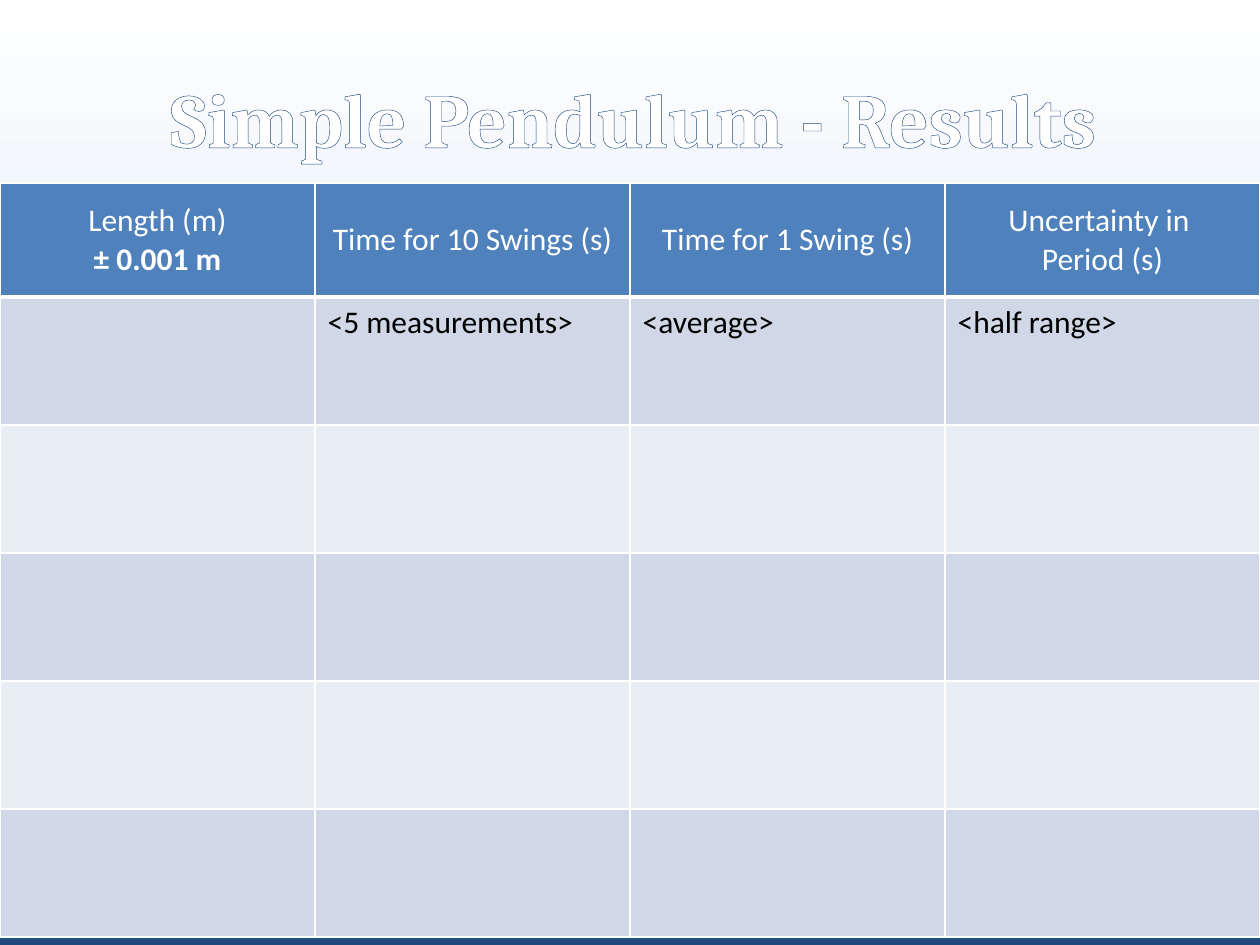
from pptx import Presentation as Deck
from pptx.dml.color import RGBColor as RGB
from pptx.enum.text import MSO_ANCHOR as Anchor, PP_ALIGN as Align
from pptx.oxml import parse_xml as parse
from pptx.util import Emu, Pt

NS = 'xmlns:a="http://schemas.openxmlformats.org/drawingml/2006/main"'
UNIT = 914400 / 126
NAVY, BLUE, WHITE, BLACK = "1F497D", "4F81BD", "FFFFFF", "000000"
BANDS = ["D0D8E8", "E9EDF4"]
HEADS = [
    ["Length (m)", "± 0.001 m"],
    ["Time for 10 Swings (s)"],
    ["Time for 1 Swing (s)"],
    ["Uncertainty in ", "Period (s)"],
]
HINTS = ["", "<5 measurements>", "<average>", "<half range>"]
BLANKS = [[""] * 4 for _ in range(4)]


def px(n):
    return Emu(round(n * UNIT))


def color(code):
    return RGB.from_string(code)


def line(tag, code, width):
    return parse(
        f'<a:{tag} {NS} w="{Pt(width)}"><a:solidFill>'
        f'<a:srgbClr val="{code}"/></a:solidFill></a:{tag}>'
    )


class Page:
    body, serif = "Calibri", "Cambria"

    def __init__(self, deck):
        self.slide = deck.slides.add_slide(deck.slide_layouts[6])

    def style(self, font, name, size, code, bold=False):
        font.name, font.size, font.bold = name, Pt(size), bold
        font.color.rgb = color(code)

    def back(self, stops):
        fill = self.slide.background.fill
        fill.gradient()
        fill.gradient_angle = 90
        marks = fill.gradient_stops
        first = marks[0]._gs
        group = first.getparent()
        for old in list(group):
            group.remove(old)
        for spot, code in stops:
            group.append(parse(
                f'<a:gs {NS} pos="{spot * 1000}"><a:srgbClr val="{code}"/></a:gs>'
            ))

    def title(self, text, x, y, w, h):
        frame = self.slide.shapes.add_textbox(px(x), px(y), px(w), px(h)).text_frame
        frame.word_wrap = True
        frame.vertical_anchor = Anchor.MIDDLE
        para = frame.paragraphs[0]
        para.alignment = Align.CENTER
        run = para.add_run()
        run.text = text
        self.style(run.font, self.serif, 44, WHITE, True)
        run._r.get_or_add_rPr().insert(0, line("ln", NAVY, 2.48))

    def cell(self, cell, lines, fill, ink, head):
        props = cell._tc.get_or_add_tcPr()
        for side in "LRTB":
            width = 3 if head and side == "B" else 1
            props.append(line(f"ln{side}", WHITE, width))
        cell.fill.solid()
        cell.fill.fore_color.rgb = color(fill)
        cell.vertical_anchor = Anchor.MIDDLE if head else Anchor.TOP
        cell.text = "\n".join(lines)
        for i, para in enumerate(cell.text_frame.paragraphs):
            para.alignment = Align.CENTER if head else Align.LEFT
            self.style(para.font, self.body, 18, ink, lines[i].startswith("±"))

    def table(self, heads, rows, x, y, w, top, step):
        count = len(rows) + 1
        high = top + step * len(rows)
        grid = self.slide.shapes.add_table(
            count, len(heads), px(x), px(y), px(w), px(high)
        ).table
        grid.first_row = grid.horz_banding = False
        for i, row in enumerate(grid.rows):
            row.height = px(step if i else top)
        for j, head in enumerate(heads):
            self.cell(grid.cell(0, j), head, BLUE, WHITE, True)
        for i, row in enumerate(rows):
            for j, text in enumerate(row):
                self.cell(grid.cell(i + 1, j), [text], BANDS[i % 2], BLACK, False)


def main():
    deck = Deck()
    deck.slide_width, deck.slide_height = px(1260), px(945)
    page = Page(deck)
    page.back([(0, NAVY), (16, "C6D9F1"), (100, WHITE)])
    page.title("Simple Pendulum - Results", 33, 38, 1201, 158)
    page.table(HEADS, [HINTS] + BLANKS, 0, 183, 1260, 114, 128)
    deck.save("out.pptx")


if __name__ == "__main__":
    main()
